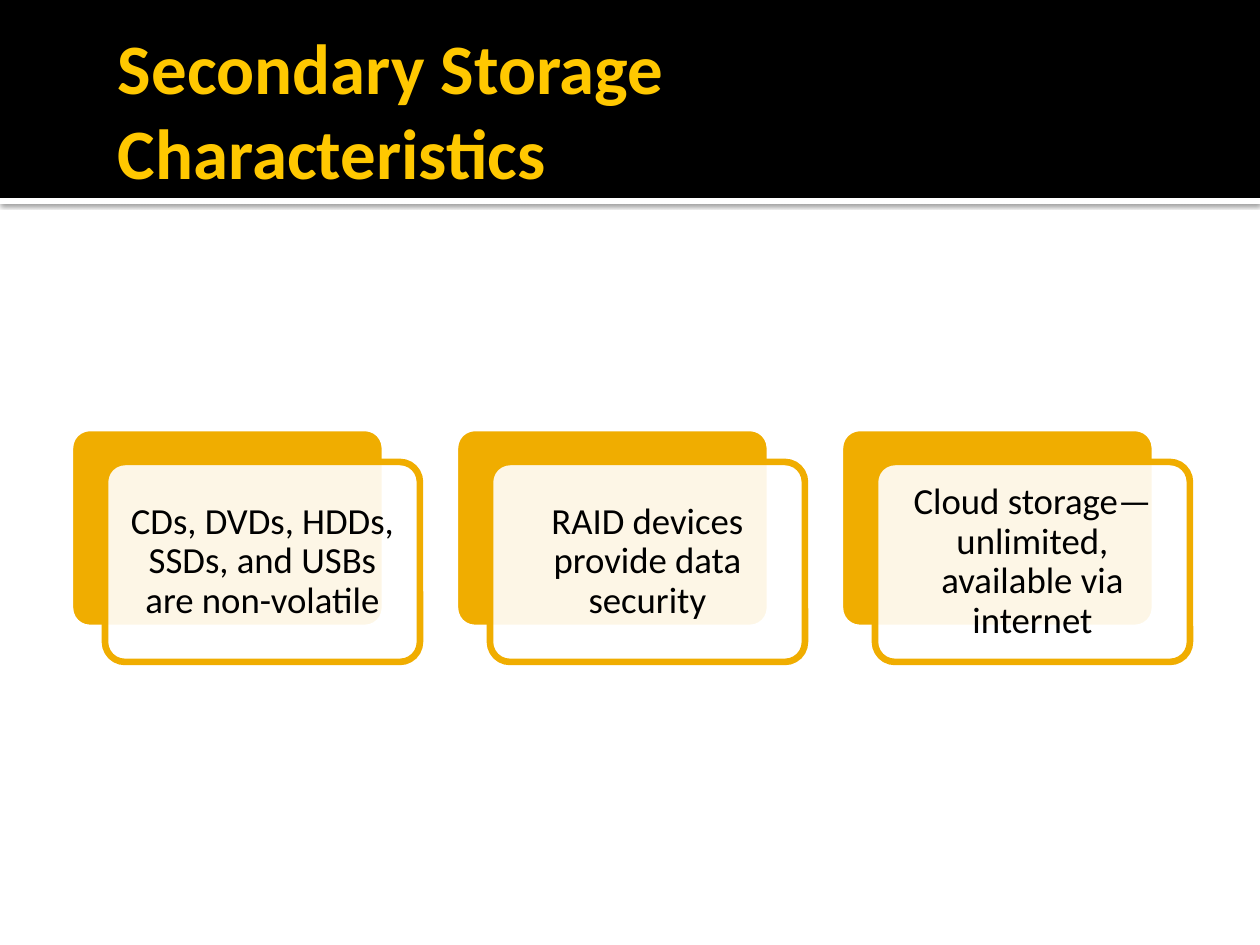
from dataclasses import dataclass

import lxml.etree
import pptx
import pptx.dml.color
import pptx.enum.shapes
import pptx.enum.text
import pptx.oxml.ns
import pptx.util

SCALE = 914400 / 126  # EMU per px
SHAPE = pptx.enum.shapes.MSO_SHAPE
ALIGN = pptx.enum.text.PP_ALIGN


@dataclass(frozen=True)
class Theme:
    font: str = "Calibri"
    black: str = "000000"
    white: str = "FFFFFF"
    gold: str = "F0AD00"
    title: str = "FFC800"
    head: float = 40.5
    body: float = 21
    line: float = 3.78


@dataclass(frozen=True)
class Box:
    left: int
    top: int
    width: int
    height: int

    def shift(self, right: int, down: int) -> "Box":
        return Box(self.left + right, self.top + down, self.width, self.height)

    def emu(self) -> list[int]:
        return [px(n) for n in (self.left, self.top, self.width, self.height)]


THEME = Theme()
PAGE = Box(0, 0, 1260, 945)
BAND = Box(0, 0, 1260, 198)
STRIP = Box(0, 198, 1260, 6)
TITLE = Box(105, 53, 994, 112)
CARD = Box(70, 428, 315, 200)
PITCH = 385
OFFSET = (35, 34)
CARDS = (
    "CDs, DVDs, HDDs, SSDs, and USBs are non-volatile",
    "RAID devices provide data security",
    "Cloud storage—unlimited, available via internet",
)


def px(count: int) -> int:
    return pptx.util.Emu(round(count * SCALE))


def rgb(code: str) -> pptx.dml.color.RGBColor:
    return pptx.dml.color.RGBColor.from_string(code)


def add(parent, tag: str, **attrs: str):
    return lxml.etree.SubElement(parent, pptx.oxml.ns.qn(tag), attrs)


def panel(slide, box: Box, fill: str, line: str | None = None):
    """Draw a plain rectangle, or a rounded one when a line colour is given."""
    kind = SHAPE.ROUNDED_RECTANGLE if line else SHAPE.RECTANGLE
    shape = slide.shapes.add_shape(kind, *box.emu())
    shape.shadow.inherit = False
    shape.fill.solid()
    shape.fill.fore_color.rgb = rgb(fill)
    if line:
        shape.adjustments[0] = 0.1
        shape.line.color.rgb = rgb(line)
        shape.line.width = pptx.util.Pt(THEME.line)
    else:
        shape.line.fill.background()
    return shape


def write(shape, text: str, size: float, color: str, insets: tuple[int, int, int, int]):
    """Set middle-anchored text; insets run left, top, right, bottom."""
    frame = shape.text_frame
    frame.word_wrap = True
    frame.vertical_anchor = pptx.enum.text.MSO_ANCHOR.MIDDLE
    (frame.margin_left, frame.margin_top,
     frame.margin_right, frame.margin_bottom) = map(px, insets)
    para = frame.paragraphs[0]
    para.text = text
    para.font.name = THEME.font
    para.font.size = pptx.util.Pt(size)
    para.font.color.rgb = rgb(color)
    return para


def shade(shape) -> None:
    """Cast a soft shadow straight down."""
    effects = shape._element.spPr.find(pptx.oxml.ns.qn("a:effectLst"))
    outer = add(effects, "a:outerShdw", blurRad="31750", dist="10160",
                dir="5400000", algn="tl", rotWithShape="0")
    color = add(outer, "a:srgbClr", val=THEME.black)
    add(color, "a:alpha", val="60000")


def fade(shape, percent: int) -> None:
    """Set the opacity of a solid fill."""
    fill = shape._element.spPr.find(pptx.oxml.ns.qn("a:solidFill"))
    add(fill[0], "a:alpha", val=str(percent * 1000))


def header(slide) -> None:
    shade(panel(slide, STRIP, THEME.white))
    panel(slide, BAND, THEME.black)
    title = slide.shapes.add_textbox(*TITLE.emu())
    para = write(title, "Secondary Storage Characteristics",
                 THEME.head, THEME.title, (13, 6, 6, 6))
    para.font.bold = True
    para.alignment = ALIGN.LEFT


def card(slide, box: Box, text: str) -> None:
    panel(slide, box, THEME.gold, THEME.white)
    front = panel(slide, box.shift(*OFFSET), THEME.white, THEME.gold)
    fade(front, 90)
    para = write(front, text, THEME.body, THEME.black, (11, 11, 11, 11))
    para.alignment = ALIGN.CENTER
    para.line_spacing = 0.9


def main() -> None:
    deck = pptx.Presentation()
    deck.slide_width, deck.slide_height = px(PAGE.width), px(PAGE.height)
    slide = deck.slides.add_slide(deck.slide_layouts[6])
    header(slide)
    for index, text in enumerate(CARDS):
        card(slide, CARD.shift(index * PITCH, 0), text)
    deck.save("out.pptx")


if __name__ == "__main__":
    main()
